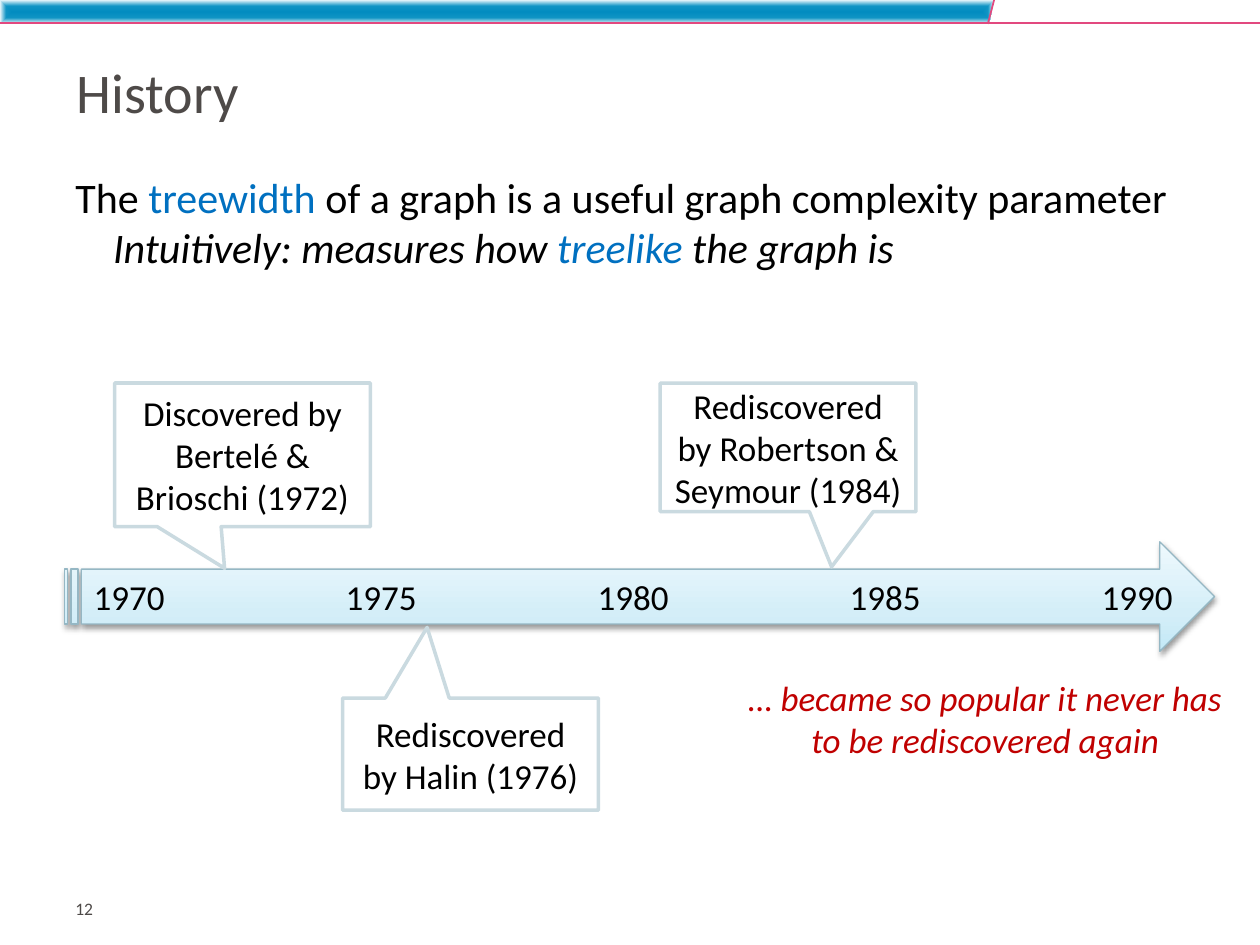
from typing import NamedTuple

from pptx import Presentation
from pptx import util as u
from pptx.dml.color import RGBColor
from pptx.enum import shapes, text
from pptx.oxml import parse_xml
from pptx.oxml.ns import nsdecls

FONT = "Calibri"
BLACK, GREY, BLUE, RED = "000000", "4E4A48", "0070C0", "C00000"
PINK = "E2497F"
CENTER = text.PP_ALIGN.CENTER
MIDDLE = text.MSO_ANCHOR.MIDDLE


class Run(NamedTuple):
    words: str
    color: str = BLACK
    italic: bool = False


class Callout(NamedTuple):
    words: str
    left: float
    top: float
    height: float
    tip: tuple[float, float]


CALLOUTS = [
    Callout("Discovered by Bertelé & Brioschi (1972)", 0.91, 3.04, 1.14, (-0.07, 0.79)),
    Callout("Rediscovered by Halin (1976)", 2.72, 5.54, 0.89, (-0.17, -1.13)),
    Callout("Rediscovered by Robertson & Seymour (1984)", 5.24, 3.04, 1.02, (0.17, 0.93)),
]
CALLOUT_WIDTH = 2.03
YEARS = range(1970, 1991, 5)
YEAR_GAP = 2


def rgb(color: str) -> RGBColor:
    return RGBColor.from_string(color)


def box(left: float, top: float, width: float, height: float) -> list[int]:
    return [u.Inches(v) for v in (left, top, width, height)]


def add_runs(p, runs: list[Run], size: float) -> None:
    for run in runs:
        r = p.add_run()
        r.text = run.words
        r.font.name, r.font.size = FONT, u.Pt(size)
        r.font.italic = run.italic
        r.font.color.rgb = rgb(run.color)


def set_text(sp, runs: list[Run], size: float, align=text.PP_ALIGN.LEFT,
             anchor=text.MSO_ANCHOR.TOP):
    tf = sp.text_frame
    tf.word_wrap, tf.vertical_anchor = True, anchor
    p = tf.paragraphs[0]
    p.alignment = align
    add_runs(p, runs, size)
    return tf


def set_gradient(sp, stops: list[tuple[int, str]], direction: str) -> None:
    sp.fill.background()
    marks = "".join(f'<a:gs pos="{pos * 1000}"><a:srgbClr val="{color}"/></a:gs>'
                    for pos, color in stops)
    fill = parse_xml(f'<a:gradFill {nsdecls("a")} rotWithShape="1">'
                     f'<a:gsLst>{marks}</a:gsLst>{direction}</a:gradFill>')
    spPr = sp._element.spPr
    spPr.replace(spPr.find("{*}noFill"), fill)


def set_line(sp, color: str, width: float) -> None:
    sp.line.color.rgb = rgb(color)
    sp.line.width = u.Pt(width)


def add_rule(s, x1: float, y1: float, x2: float, y2: float) -> None:
    line = s.shapes.add_connector(shapes.MSO_CONNECTOR.STRAIGHT,
                                  *box(x1, y1, x2, y2))
    set_line(line, PINK, 1)
    line._element.spPr.append(parse_xml(f'<a:effectLst {nsdecls("a")}/>'))


def add_banner(s) -> None:
    # Outline in hundredths of an inch
    outline = s.shapes.build_freeform(0, 0, scale=u.Inches(0.01))
    outline.add_line_segments([(789, 0), (785, 19), (0, 19)], close=True)
    bar = outline.convert_to_shape()
    bar.shadow.inherit = False
    set_gradient(bar, [(0, "038CC0"), (49, "0F94C4"), (100, "EEF9FD")],
                 '<a:path path="shape"><a:fillToRect l="50000" t="50000" '
                 'r="50000" b="50000"/></a:path>')
    bar.line.fill.background()
    add_rule(s, 7.89, 0, 7.84, 0.19)
    add_rule(s, 10, 0.18, 0, 0.18)


def add_timeline(s) -> None:
    arrow = s.shapes.add_shape(shapes.MSO_SHAPE.STRIPED_RIGHT_ARROW,
                               *box(0.51, 4.3, 9.13, 0.87))
    set_gradient(arrow, [(0, "C3E8F6"), (35, "D4EEF8"), (100, "EEF9FD")],
                 '<a:lin ang="16200000" scaled="0"/>')
    set_line(arrow, "95B7C4", 0.75)
    arrow.shadow.inherit = False
    arrow._element.spPr.find("{*}effectLst").append(parse_xml(
        f'<a:outerShdw {nsdecls("a")} blurRad="{u.Pt(3.1)}" dist="{u.Pt(1.6)}" '
        'dir="5400000" rotWithShape="0"><a:srgbClr val="000000">'
        '<a:alpha val="38000"/></a:srgbClr></a:outerShdw>'))
    # Years at evenly spaced tab stops
    tf = set_text(arrow, [Run("\t".join(map(str, YEARS)))], 20, anchor=MIDDLE)
    stops = "".join(f'<a:tab pos="{u.Inches(YEAR_GAP * i)}" algn="l"/>'
                    for i in range(1, len(YEARS)))
    tf.paragraphs[0]._p.get_or_add_pPr().append(
        parse_xml(f'<a:tabLst {nsdecls("a")}>{stops}</a:tabLst>'))


def add_callout(s, c: Callout) -> None:
    sp = s.shapes.add_shape(shapes.MSO_SHAPE.RECTANGULAR_CALLOUT,
                            *box(c.left, c.top, CALLOUT_WIDTH, c.height))
    sp.adjustments[0], sp.adjustments[1] = c.tip
    sp.shadow.inherit = False
    sp.fill.solid()
    sp.fill.fore_color.rgb = rgb("FFFFFF")
    set_line(sp, "CADAE0", 2)
    set_text(sp, [Run(c.words)], 20, CENTER, MIDDLE)


def main() -> None:
    prs = Presentation()
    prs.slide_width, prs.slide_height = u.Inches(10), u.Inches(7.5)
    s = prs.slides.add_slide(prs.slide_layouts[6])

    add_banner(s)

    # Title
    title = s.shapes.add_textbox(*box(0.51, 0.38, 9, 0.69))
    set_text(title, [Run("History", GREY)], 32, anchor=MIDDLE)

    # Statement with an indented second line
    body = s.shapes.add_textbox(*box(0.5, 1.31, 9, 5.39))
    tf = set_text(body, [Run("The "), Run("treewidth ", BLUE),
                         Run("of a graph is a useful graph complexity parameter")], 24)
    p = tf.add_paragraph()
    p._p.get_or_add_pPr().set("marL", str(u.Inches(0.3)))
    add_runs(p, [Run("Intuitively: measures how ", italic=True),
                 Run("treelike", BLUE, True),
                 Run(" the graph is", italic=True)], 24)

    # Slide number
    number = s.shapes.add_textbox(*box(0.5, 7.13, 2.14, 0.3))
    set_text(number, [Run("12", GREY)], 10).margin_top = 0

    # Timeline and its events
    add_timeline(s)
    for callout in CALLOUTS:
        add_callout(s, callout)

    # Closing remark
    remark = s.shapes.add_textbox(*box(5.84, 5.32, 3.96, 0.77))
    set_text(remark, [Run("… became so popular it never has to be rediscovered again",
                          RED, True)], 20, CENTER)

    prs.save("out.pptx")


if __name__ == "__main__":
    main()
